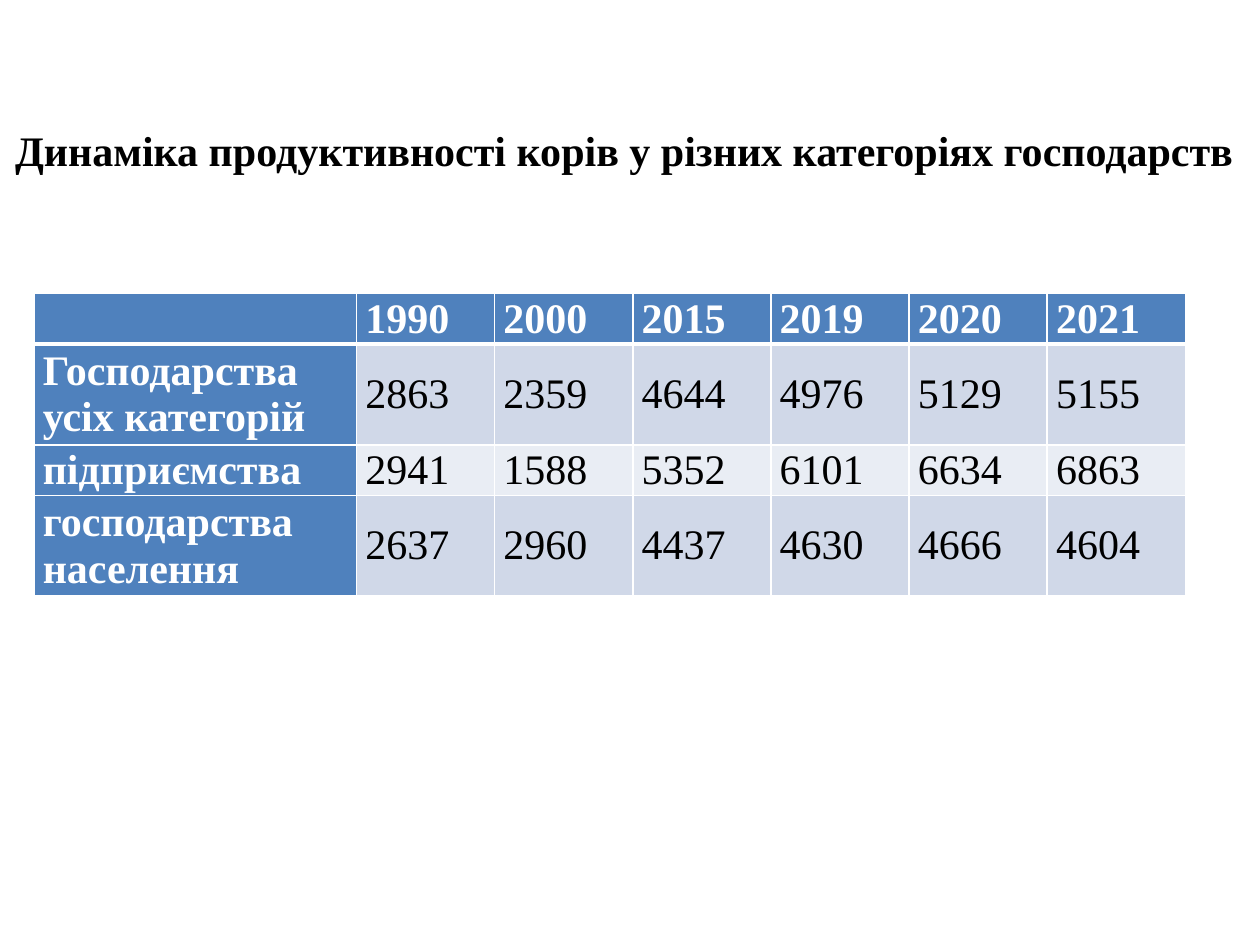
from lxml.etree import SubElement
from pptx import Presentation
from pptx.dml.color import RGBColor
from pptx.enum.text import MSO_ANCHOR, MSO_AUTO_SIZE, PP_ALIGN
from pptx.oxml.ns import qn
from pptx.util import Inches, Pt

COLORS = {"text": "000000", "light": "FFFFFF", "head": "4F81BD",
          "odd": "D0D8E8", "even": "E9EDF4"}
GRID_COLS, GRID_ROWS = 100, 75

TITLE = "Динаміка продуктивності корів у різних категоріях господарств"
YIELDS = [
    ["", "1990", "2000", "2015", "2019", "2020", "2021"],
    ["Господарства усіх категорій", "2863", "2359", "4644", "4976", "5129", "5155"],
    ["підприємства", "2941", "1588", "5352", "6101", "6634", "6863"],
    ["господарства населення", "2637", "2960", "4437", "4630", "4666", "4604"],
]


class SlideBuilder:
    font, size = "Times New Roman", Pt(24)

    def __init__(self, prs):
        self.col = prs.slide_width / GRID_COLS
        self.row = prs.slide_height / GRID_ROWS
        self.slide = prs.slides.add_slide(prs.slide_layouts[5])

    def box(self, left, top, width, height):
        """Convert grid columns and rows to slide lengths."""
        return (round(left * self.col), round(top * self.row),
                round(width * self.col), round(height * self.row))

    def format_runs(self, p, color, bold):
        for r in p.runs:
            r.font.name, r.font.size, r.font.bold = self.font, self.size, bold
            r.font.color.rgb = RGBColor.from_string(COLORS[color])

    def title(self, text, area, indent):
        sp = self.slide.shapes.title
        sp.left, sp.top, sp.width, sp.height = self.box(*area)
        tf = sp.text_frame
        tf.text = text
        tf.word_wrap = False
        tf.auto_size = MSO_AUTO_SIZE.SHAPE_TO_FIT_TEXT
        tf.vertical_anchor = MSO_ANCHOR.MIDDLE
        p = tf.paragraphs[0]
        p.alignment = PP_ALIGN.JUSTIFY
        p._p.get_or_add_pPr().set("indent", str(round(indent * self.col)))
        self.format_runs(p, "text", True)

    def borders(self, cell, widths):
        tcPr = cell._tc.get_or_add_tcPr()
        for side, width in zip("LRTB", widths):
            ln = SubElement(tcPr, qn(f"a:ln{side}"), w=str(Pt(width)))
            fill = SubElement(ln, qn("a:solidFill"))
            SubElement(fill, qn("a:srgbClr"), val=COLORS["light"])

    def cell(self, cell, text, i, j):
        head = i == 0 or j == 0
        self.borders(cell, (1, 1, 3 if i == 1 else 1, 3 if i == 0 else 1))
        fill = "head" if head else "odd" if i % 2 else "even"
        cell.fill.solid()
        cell.fill.fore_color.rgb = RGBColor.from_string(COLORS[fill])
        cell.margin_left = cell.margin_right = Inches(0.07)
        cell.margin_top = cell.margin_bottom = 0
        cell.vertical_anchor = MSO_ANCHOR.MIDDLE
        if text:
            cell.text_frame.text = text
            self.format_runs(cell.text_frame.paragraphs[0],
                             "light" if head else "text", head)

    def table(self, data, left, top, width, row_heights, label_share):
        """Add a table whose label column takes label_share of its width."""
        area = self.box(left, top, width, sum(row_heights))
        years = len(data[0]) - 1
        table = self.slide.shapes.add_table(len(data), years + 1, *area).table
        shares = [label_share] + [(1 - label_share) / years] * years
        for column, share in zip(table.columns, shares):
            column.width = round(area[2] * share)
        for i, (values, height) in enumerate(zip(data, row_heights)):
            table.rows[i].height = round(height * self.row)
            for j, text in enumerate(values):
                self.cell(table.cell(i, j), text, i, j)


def main():
    prs = Presentation()
    prs.slide_width, prs.slide_height = Inches(10), Inches(7.5)
    s = SlideBuilder(prs)
    s.title(TITLE, (-4.7, 9.3, 104.7, 5.1), indent=4.9)
    s.table(YIELDS, 2.7, 23.3, 91.4, row_heights=(4, 8, 4, 8), label_share=0.28)
    prs.save("out.pptx")


if __name__ == "__main__":
    main()
